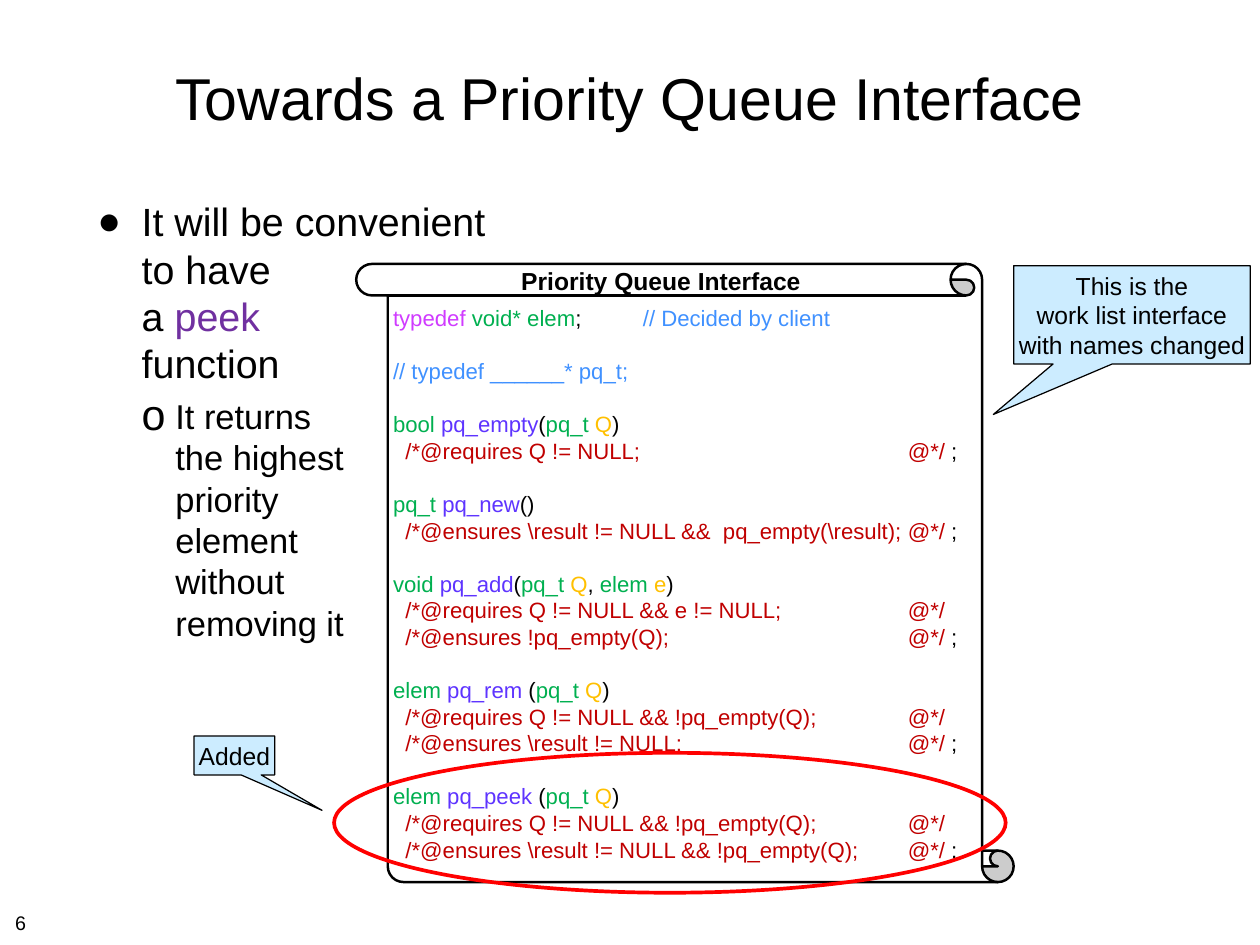
"""Build the slide on the priority queue interface."""
from dataclasses import dataclass, field

from lxml import etree
from pptx import Presentation
from pptx.dml.color import RGBColor
from pptx.enum.shapes import MSO_SHAPE
from pptx.enum.text import MSO_ANCHOR, PP_ALIGN
from pptx.oxml.ns import qn
from pptx.util import Inches, Pt

LEFT, MID = PP_ALIGN.LEFT, PP_ALIGN.CENTER
TOP, CENTER = MSO_ANCHOR.TOP, MSO_ANCHOR.MIDDLE
SCROLL, OVAL = MSO_SHAPE.VERTICAL_SCROLL, MSO_SHAPE.OVAL
CALLOUT = MSO_SHAPE.RECTANGULAR_CALLOUT

BLACK, WHITE, RED, SKY = "000000", "FFFFFF", "FF0000", "CCECFF"
PINK, GREEN, BLUE = "D03BFF", "00B050", "4091FF"
VIOLET, GOLD, CRIMSON, PURPLE = "5E34FF", "FFC000", "C00000", "7030A0"
PAD = (0.06, 0.06, 0.06, 0.06)
INDENT, END = 0.14, 5.81

Box = tuple[float, float, float, float]
Run = tuple[str, str]


@dataclass
class Bullet:
    char: str
    left: float
    hang: float
    scale: int = 100


@dataclass
class Para:
    runs: list[Run]
    size: float = 18
    gap: float = 0
    align: PP_ALIGN = LEFT
    bold: bool = False
    tabs: tuple[float, ...] = (INDENT, END)
    bullet: Bullet | None = None


@dataclass
class Shape:
    kind: MSO_SHAPE
    box: Box
    line: str
    width: float
    fill: str | None = None
    adjust: tuple[float, ...] = ()
    flip: bool = False
    paras: list[Para] = field(default_factory=list)
    pad: Box = PAD
    wrap: bool = True


def color(code: str) -> RGBColor:
    return RGBColor.from_string(code)


def mark(props, bullet: Bullet) -> None:
    props.set("marL", str(Inches(bullet.left)))
    props.set("indent", str(Inches(-bullet.hang)))
    tint = etree.SubElement(props, qn("a:buClr"))
    etree.SubElement(tint, qn("a:srgbClr"), val=BLACK)
    etree.SubElement(props, qn("a:buSzPct"), val=str(bullet.scale * 1000))
    etree.SubElement(props, qn("a:buFont"), typeface="Arial")
    etree.SubElement(props, qn("a:buChar"), char=bullet.char)


def write(item, paras: list[Para], *, pad: Box = PAD, anchor: MSO_ANCHOR = TOP,
          wrap: bool = True) -> None:
    frame = item.text_frame
    frame.word_wrap, frame.vertical_anchor = wrap, anchor
    (frame.margin_left, frame.margin_top,
     frame.margin_right, frame.margin_bottom) = map(Inches, pad)
    for i, para in enumerate(paras):
        line = frame.add_paragraph() if i else frame.paragraphs[0]
        line.alignment, line.space_before = para.align, Pt(para.gap)
        props = line._p.get_or_add_pPr()
        if para.bullet:
            mark(props, para.bullet)
        stops = etree.SubElement(props, qn("a:tabLst"))
        for stop in para.tabs:
            etree.SubElement(stops, qn("a:tab"), pos=str(Inches(stop)), algn="l")
        for text, code in para.runs:
            for j, part in enumerate(text.split("\n")):
                if j:
                    line.add_line_break()
                if part:
                    run = line.add_run()
                    run.text = part
                    run.font.name, run.font.size = "Arial", Pt(para.size)
                    run.font.bold = para.bold
                    run.font.color.rgb = color(code)


def label(slide, box: Box, paras: list[Para], **style) -> None:
    write(slide.shapes.add_textbox(*map(Inches, box)), paras, **style)


def draw(slide, part: Shape) -> None:
    item = slide.shapes.add_shape(part.kind, *map(Inches, part.box))
    item.shadow.inherit = False
    for i, value in enumerate(part.adjust):
        item.adjustments[i] = value
    if part.flip:
        item._element.spPr.xfrm.set("flipH", "1")
    if part.fill:
        item.fill.solid()
        item.fill.fore_color.rgb = color(part.fill)
    else:
        item.fill.background()
    item.line.color.rgb, item.line.width = color(part.line), Pt(part.width)
    if part.paras:
        write(item, part.paras, pad=part.pad, anchor=CENTER, wrap=part.wrap)


def header(kind: str, name: str, *args: tuple[str, str]) -> Para:
    runs = [(kind + " ", GREEN), (name, VIOLET), ("(", BLACK)]
    for i, (sort, arg) in enumerate(args):
        if i:
            runs.append((", ", BLACK))
        runs += [(sort + " ", GREEN), (arg, GOLD)]
    return Para(runs + [(")", BLACK)], gap=21.6)


def clause(text: str, last: bool = True) -> Para:
    tail = [(" ;", BLACK)] if last else []
    return Para([(f"\t/*@{text};\t@*/", CRIMSON)] + tail)


def note(box: Box, text: str, adjust: tuple[float, ...]) -> Shape:
    return Shape(CALLOUT, box, BLACK, 1, SKY, adjust, pad=(0.05,) * 4, wrap=False,
                 paras=[Para([(text, BLACK)], 20, align=MID)])


QUEUE = ("pq_t", "Q")
FULL = "requires Q != NULL && !pq_empty(Q)"
CODE = [
    Para([("typedef ", PINK), ("void* elem", GREEN), (";", BLACK),
          ("\t// Decided by client", BLUE)], tabs=(2.82,)),
    Para([("// typedef ______* pq_t;", BLUE)], gap=21.6),
    header("bool", "pq_empty", QUEUE),
    clause("requires Q != NULL"),
    header("pq_t", "pq_new"),
    clause("ensures \\result != NULL &&  pq_empty(\\result)"),
    header("void", "pq_add", QUEUE, ("elem", "e")),
    clause("requires Q != NULL && e != NULL", False),
    clause("ensures !pq_empty(Q)"),
    header("elem", "pq_rem ", QUEUE),
    clause(FULL, False),
    clause("ensures \\result != NULL"),
    header("elem", "pq_peek ", QUEUE),
    clause(FULL, False),
    clause("ensures \\result != NULL && !pq_empty(Q)"),
]
BODY = [
    Para([("It will be convenient\nto have\na ", BLACK), ("peek\n", PURPLE),
          ("function", BLACK)], 32, 8, bullet=Bullet("●", 0.5, 0.5)),
    Para([("It returns\nthe highest\npriority\nelement\nwithout\nremoving it", BLACK)],
         28, 7, bullet=Bullet("o", 0.88, 0.38, 125)),
]
PAPER = Shape(SCROLL, (4.02, 2.98, 7.42, 6.98), BLACK, 2, WHITE, (0.051,), True,
              CODE, (0.06, 0.06, 0.06, 0))
MARKS = [
    Shape(OVAL, (3.77, 8.5, 7.58, 1.58), RED, 3),
    note((11.44, 3, 2.67, 1.11), "This is the\nwork list interface\nwith names changed",
         (-0.586, 1.014)),
    note((2.19, 8.31, 0.91, 0.44), "Added", (1.088, 1.409)),
]


def main() -> None:
    deck = Presentation()
    deck.slide_width, deck.slide_height = Inches(14.22), Inches(10.67)
    slide = deck.slides.add_slide(deck.slide_layouts[6])
    label(slide, (1.04, 0.28, 12.14, 1.64), anchor=CENTER,
          paras=[Para([("Towards a Priority Queue Interface", BLACK)], 48, align=MID)])
    label(slide, (1.04, 2.17, 12.14, 7.54), BODY)
    draw(slide, PAPER)
    label(slide, (5.77, 2.95, 3.38, 0.44), pad=(0.1, 0.05, 0.1, 0.05), wrap=False,
          paras=[Para([("Priority Queue Interface", BLACK)], 20, align=MID, bold=True)])
    for part in MARKS:
        draw(slide, part)
    label(slide, (0.11, 10.23, 0.37, 0.35), [Para([("6", BLACK)], 16)], wrap=False)
    deck.save("out.pptx")


if __name__ == "__main__":
    main()
